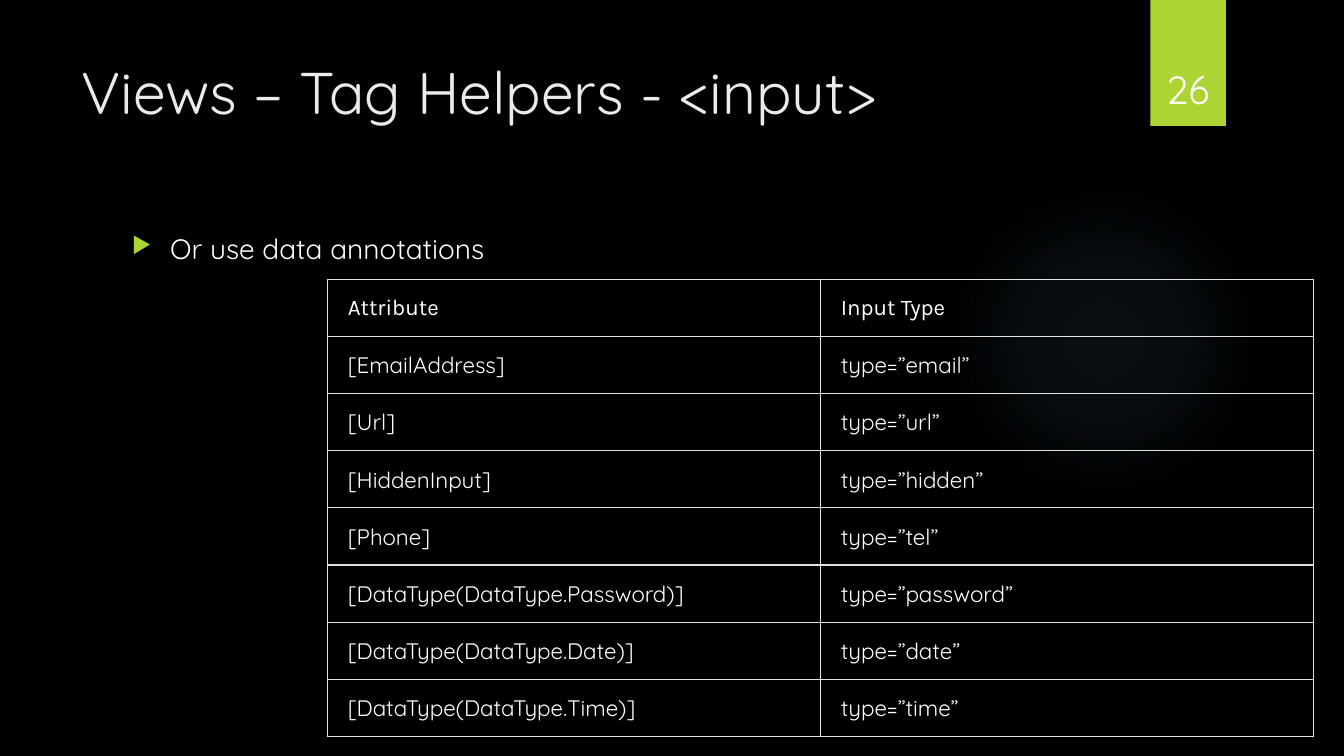
"""Build the slide on input tag helpers and data annotations."""
from lxml import etree
from pptx import Presentation
from pptx import util as u
from pptx.dml.color import RGBColor
from pptx.enum import shapes, text
from pptx.oxml import parse_xml
from pptx.oxml.ns import nsdecls, qn

COLORS = {"back": "000000", "accent": "ACD433", "title": "EBEBEB",
          "text": "FFFFFF", "border": "E3E3E3", "glow": "7AC4F0"}
TITLE = "Views – Tag Helpers - <input>"
BULLET = "Or use data annotations"
PAGE = "26"
ROWS = [
    ("Attribute", "Input Type"),
    ("[EmailAddress]", "type=”email”"),
    ("[Url]", "type=”url”"),
    ("[HiddenInput]", "type=”hidden”"),
    ("[Phone]", "type=”tel”"),
    ("[DataType(DataType.Password)]", "type=”password”"),
    ("[DataType(DataType.Date)]", "type=”date”"),
    ("[DataType(DataType.Time)]", "type=”time”"),
]
GLOW_STOPS = [(0, 7), (36, 6), (69, 0)]
TABLE_BOX = (3.25, 2.77, 9.78, 4.49)
CELL = {"margin_left": u.Inches(0.2), "margin_right": u.Inches(0.2),
        "margin_top": u.Inches(0.15), "margin_bottom": u.Inches(0.15)}


def inches(box):
    return [u.Inches(v) for v in box]


def rgb(name):
    return RGBColor.from_string(COLORS[name])


def write(p, words, size, color="text", font="Quicksand"):
    r = p.add_run()
    r.text = words
    for key, value in {"size": u.Pt(size), "name": font, "bold": False}.items():
        setattr(r.font, key, value)
    r.font.color.rgb = rgb(color)


def add_text(s, box, words, size, color="text", **frame):
    tf = s.shapes.add_textbox(*inches(box)).text_frame
    for key, value in {"word_wrap": True, **frame}.items():
        setattr(tf, key, value)
    p = tf.paragraphs[0]
    write(p, words, size, color)
    return p


def add_block(s, kind, box):
    sp = s.shapes.add_shape(kind, *inches(box))
    sp.shadow.inherit = False
    sp.line.fill.background()
    sp.fill.solid()
    sp.fill.fore_color.rgb = rgb("accent")
    return sp


def add_glow(s):
    sp = add_block(s, shapes.MSO_SHAPE.OVAL, (9.41, 1.83, 3.08, 3.08))
    stops = "".join(
        f'<a:gs pos="{pos * 1000}"><a:srgbClr val="{COLORS["glow"]}">'
        f'<a:alpha val="{alpha * 1000}"/></a:srgbClr></a:gs>'
        for pos, alpha in GLOW_STOPS)
    grad = parse_xml(
        f'<a:gradFill {nsdecls("a")} rotWithShape="1"><a:gsLst>{stops}</a:gsLst>'
        '<a:path path="circle"><a:fillToRect l="50000" t="50000" r="50000" '
        'b="50000"/></a:path></a:gradFill>')
    pr = sp.element.spPr
    pr.replace(pr.find(qn("a:solidFill")), grad)


def add_tab(s):
    sp = add_block(s, shapes.MSO_SHAPE.RECTANGLE, (11.41, 0, 0.75, 1.25))
    sp.element.spPr.find(qn("a:effectLst")).append(parse_xml(
        f'<a:outerShdw {nsdecls("a")} blurRad="{u.Pt(3)}" dist="{u.Pt(2)}" '
        f'dir="5400000" rotWithShape="0"><a:srgbClr val="{COLORS["back"]}">'
        '<a:alpha val="45000"/></a:srgbClr></a:outerShdw>'))


def add_bullet(p):
    pr = p._p.get_or_add_pPr()
    indent = u.Inches(0.38)
    pr.set("marL", str(indent))
    pr.set("indent", str(-indent))
    color = etree.SubElement(pr, qn("a:buClr"))
    etree.SubElement(color, qn("a:srgbClr"), val=COLORS["accent"])
    etree.SubElement(pr, qn("a:buSzPct"), val="80000")
    etree.SubElement(pr, qn("a:buChar"), char="▶")


def add_borders(cell):
    pr = cell._tc.get_or_add_tcPr()
    for i, side in enumerate(("lnL", "lnR", "lnT", "lnB")):
        pr.insert(i, parse_xml(
            f'<a:{side} {nsdecls("a")} w="{u.Pt(1)}"><a:solidFill>'
            f'<a:srgbClr val="{COLORS["border"]}"/></a:solidFill></a:{side}>'))


def add_annotations(s):
    table = s.shapes.add_table(len(ROWS), len(ROWS[0]), *inches(TABLE_BOX)).table
    table.first_row = table.horz_banding = False
    for i, row in enumerate(ROWS):
        for j, words in enumerate(row):
            cell = table.cell(i, j)
            for key, value in CELL.items():
                setattr(cell, key, value)
            if i == 0:
                cell.vertical_anchor = text.MSO_ANCHOR.BOTTOM
            cell.fill.background()
            add_borders(cell)
            write(cell.text_frame.paragraphs[0], words, 16,
                  font="Quicksand" if i else "Karla")


def main():
    prs = Presentation()
    prs.slide_width, prs.slide_height = inches((13.33, 7.5))
    s = prs.slides.add_slide(prs.slide_layouts[6])
    s.background.fill.solid()
    s.background.fill.fore_color.rgb = rgb("back")
    add_glow(s)
    add_tab(s)
    add_text(s, (0.71, 0.5, 10.29, 1.53), TITLE, 42, "title")
    add_bullet(add_text(s, (1.21, 2.25, 9.78, 4.59), BULLET, 20))
    page = add_text(s, (11.32, 0.32, 0.92, 0.84), PAGE, 28,
                    vertical_anchor=text.MSO_ANCHOR.BOTTOM)
    page.alignment = text.PP_ALIGN.CENTER
    add_annotations(s)
    prs.save("out.pptx")


if __name__ == "__main__":
    main()
